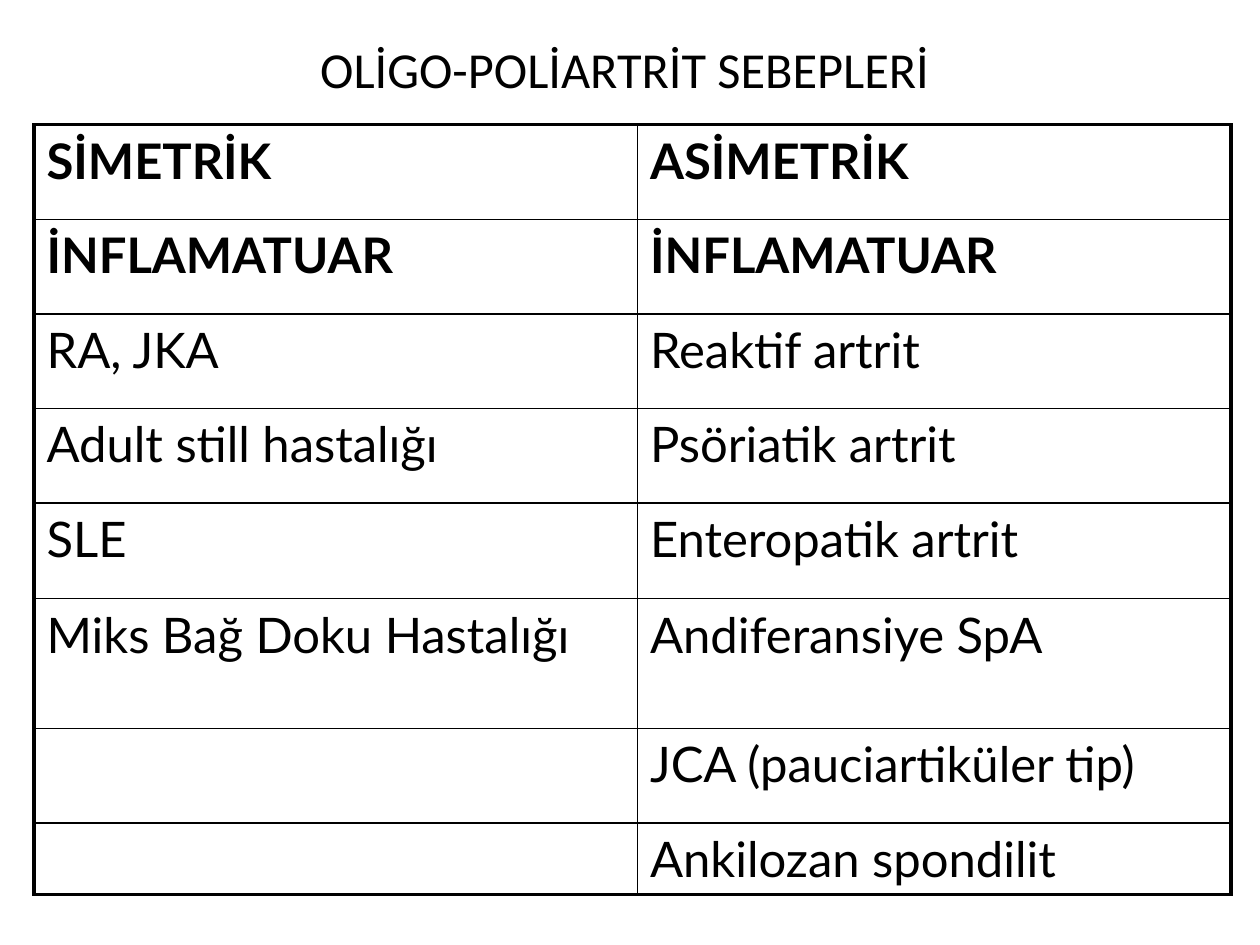
from dataclasses import dataclass
from typing import Any

from lxml.etree import SubElement
from pptx import Presentation
from pptx.dml.color import RGBColor as RGB
from pptx.enum.text import MSO_ANCHOR as Anchor, PP_ALIGN as Align
from pptx.oxml.ns import qn
from pptx.util import Inches, Pt


@dataclass(frozen=True)
class Theme:
    ink: str = "000000"
    paper: str = "FFFFFF"
    head: str = "Calibri"
    body: str = "Lato"
    head_size: float = 28.8
    body_size: float = 28
    thick: float = 2.25
    thin: float = 1


@dataclass(frozen=True)
class Row:
    left: str
    right: str
    height: float = 0.75
    bold: bool = False


THEME = Theme()
COLS = (4.79, 4.71)
ROWS = (
    Row("SİMETRİK", "ASİMETRİK", bold=True),
    Row("İNFLAMATUAR", "İNFLAMATUAR", bold=True),
    Row("RA, JKA", "Reaktif artrit"),
    Row("Adult still hastalığı", "Psöriatik artrit"),
    Row("SLE", "Enteropatik artrit", 0.76),
    Row("Miks Bağ Doku Hastalığı", "Andiferansiye SpA", 1.03),
    Row("", "JCA (pauciartiküler tip)"),
    Row("", "Ankilozan spondilit", 0.57),
)


def style(font: Any, **values: Any) -> None:
    for name, value in values.items():
        setattr(font, name, value)
    font.color.rgb = RGB.from_string(THEME.ink)


def paint(item: Any) -> None:
    item.fill.solid()
    item.fill.fore_color.rgb = RGB.from_string(THEME.paper)


def rule(cell: Any, sides: dict[str, bool]) -> None:
    """Draw the cell borders; a true side lies on the outer frame."""
    props = cell._tc.get_or_add_tcPr()
    for spot, (side, outer) in enumerate(sides.items()):
        width = THEME.thick if outer else THEME.thin
        line = SubElement(props, qn(f"a:ln{side}"), w=str(Pt(width)))
        fill = SubElement(line, qn("a:solidFill"))
        SubElement(fill, qn("a:srgbClr"), val=THEME.ink)
        props.insert(spot, line)


def add_title(slide: Any) -> None:
    title = slide.shapes.title
    place = {"left": 1, "top": 0.25, "width": 7.92, "height": 0.58}
    for name, value in place.items():
        setattr(title, name, Inches(value))
    paint(title)
    frame = title.text_frame
    frame.text = "OLİGO-POLİARTRİT SEBEPLERİ"
    frame.vertical_anchor = Anchor.MIDDLE
    para = frame.paragraphs[0]
    para.alignment = Align.CENTER
    style(para.runs[0].font, name=THEME.head, size=Pt(THEME.head_size))


def add_grid(slide: Any) -> None:
    high = sum(row.height for row in ROWS)
    grid = slide.shapes.add_table(
        len(ROWS), len(COLS), Inches(0.27), Inches(0.99),
        Inches(sum(COLS)), Inches(high),
    ).table
    grid.first_row = grid.horz_banding = False
    for col, width in zip(grid.columns, COLS):
        col.width = Inches(width)
    for r, row in enumerate(ROWS):
        grid.rows[r].height = Inches(row.height)
        for c, text in enumerate((row.left, row.right)):
            cell = grid.cell(r, c)
            paint(cell)
            rule(cell, {"L": c == 0, "R": c == len(COLS) - 1,
                        "T": r == 0, "B": r == len(ROWS) - 1})
            if text:
                cell.text = text
                style(cell.text_frame.paragraphs[0].runs[0].font,
                      name=THEME.body, size=Pt(THEME.body_size), bold=row.bold)


def main() -> None:
    deck = Presentation()
    deck.slide_width, deck.slide_height = Inches(10), Inches(7.5)
    slide = deck.slides.add_slide(deck.slide_layouts[5])
    add_title(slide)
    add_grid(slide)
    deck.save("out.pptx")


if __name__ == "__main__":
    main()
